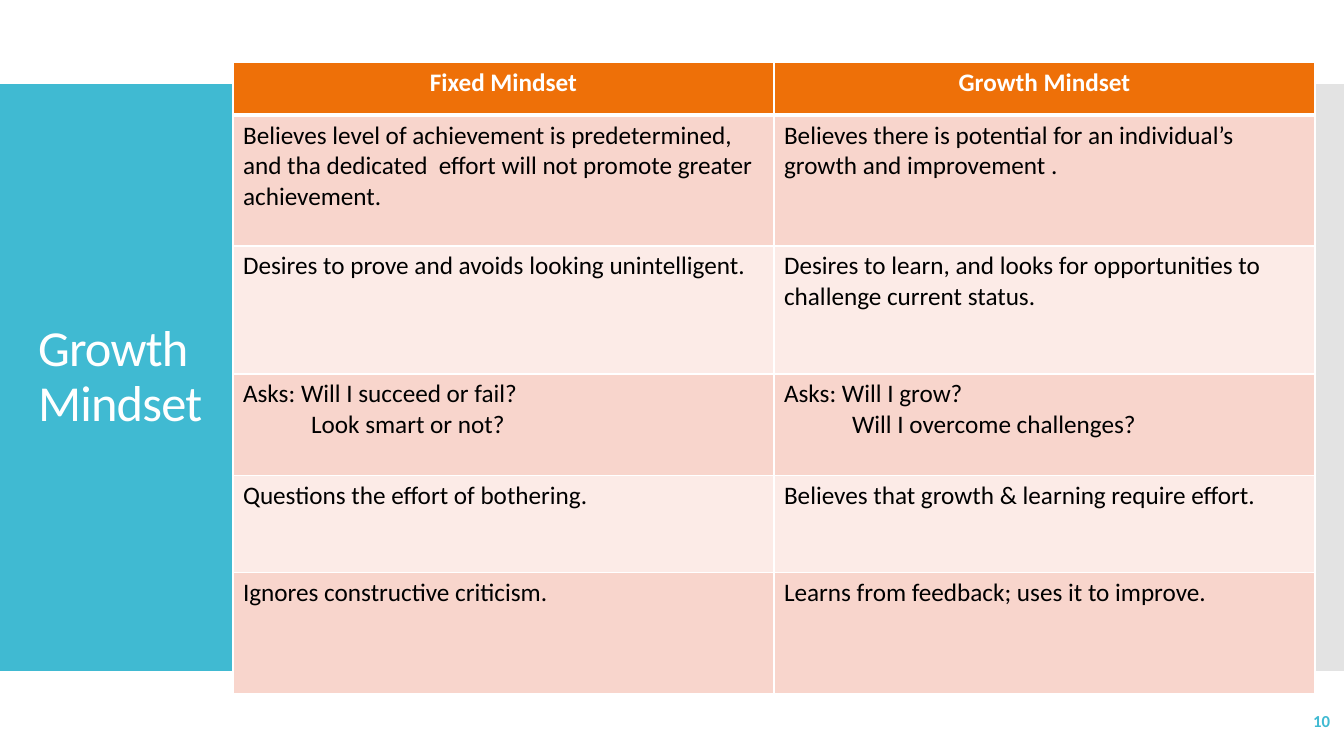
from lxml.etree import SubElement
from pptx import Presentation
from pptx.dml.color import RGBColor
from pptx.enum.shapes import MSO_SHAPE
from pptx.enum.text import MSO_ANCHOR, MSO_AUTO_SIZE, PP_ALIGN
from pptx.oxml.ns import qn
from pptx.util import Emu, Pt

COLORS = {
    "teal": "40BAD2",
    "gray": "C8C8C8",
    "orange": "EE7008",
    "rose": "F8D5CC",
    "blush": "FCEBE7",
    "white": "FFFFFF",
    "black": "000000",
}
ROWS = [
    (53, "Fixed Mindset", "Growth Mindset"),
    (131, "Believes level of achievement is predetermined, and tha dedicated  effort will not promote greater achievement.",
     "Believes there is potential for an individual’s growth and improvement ."),
    (128, "Desires to prove and avoids looking unintelligent.",
     "Desires to learn, and looks for opportunities to challenge current status."),
    (102, "Asks: Will I succeed or fail?\nLook smart or not?",
     "Asks: Will I grow?\nWill I overcome challenges?"),
    (97, "Questions the effort of bothering.", "Believes that growth & learning require effort."),
    (121, "Ignores constructive criticism.", "Learns from feedback; uses it to improve."),
]
COLUMN_WIDTH = 541


def px(length):
    return Emu(round(length * 914400 / 100.8))


def write_text(frame, text, size=18, color="black", bold=False, align=PP_ALIGN.LEFT,
               line_spacing=1.0, tracking=0, later_indent=0):
    for number, line in enumerate(text.split("\n")):
        paragraph = frame.add_paragraph() if number else frame.paragraphs[0]
        paragraph.alignment = align
        paragraph.line_spacing = line_spacing
        run = paragraph.add_run()
        run.text = line
        run.font.name = "Calibri"
        run.font.size = Pt(size)
        run.font.bold = bold
        run.font.color.rgb = RGBColor.from_string(COLORS[color])
        if tracking:
            run.font._element.set("spc", str(tracking))
        if number:
            paragraph._p.get_or_add_pPr().set("marL", str(px(later_indent)))


presentation = Presentation()
presentation.slide_width = px(1344)
presentation.slide_height = px(756)
slide = presentation.slides.add_slide(presentation.slide_layouts[5])

for left, width, color, alpha in [(0, 380, "teal", 100), (1302, 42, "gray", 50)]:
    band = slide.shapes.add_shape(MSO_SHAPE.RECTANGLE, px(left), px(84), px(width), px(587))
    band.shadow.inherit = False
    band.line.fill.background()
    band.fill.solid()
    band.fill.fore_color.rgb = RGBColor.from_string(COLORS[color])
    if alpha < 100:
        color_element = band._element.spPr.find(qn("a:solidFill"))[0]
        SubElement(color_element, qn("a:alpha"), val=str(alpha * 1000))

title = slide.shapes.title
title.left, title.top, title.width, title.height = px(28), px(124), px(325), px(507)
title.element.getparent().append(title.element)
title.text_frame.word_wrap = True
title.text_frame.auto_size = MSO_AUTO_SIZE.NONE
title.text_frame.vertical_anchor = MSO_ANCHOR.MIDDLE
write_text(title.text_frame, "Growth Mindset", size=36, color="white", line_spacing=0.9, tracking=-60)

page_number = slide.shapes.add_textbox(px(1172), px(701), px(168), px(40))
page_number.text_frame.word_wrap = True
page_number.text_frame.vertical_anchor = MSO_ANCHOR.MIDDLE
write_text(page_number.text_frame, "10", size=12, color="teal", bold=True, align=PP_ALIGN.RIGHT)

table_height = sum(row[0] for row in ROWS)
table = slide.shapes.add_table(len(ROWS), 2, px(233), px(62), px(2 * COLUMN_WIDTH), px(table_height)).table
for column in table.columns:
    column.width = px(COLUMN_WIDTH)

for row_number, (height, *texts) in enumerate(ROWS):
    table.rows[row_number].height = px(height)
    header = row_number == 0
    fill_color = "orange" if header else ("blush", "rose")[row_number % 2]
    for column_number, text in enumerate(texts):
        cell = table.cell(row_number, column_number)
        properties = cell._tc.get_or_add_tcPr()
        for side in "LRTB":
            thick = (row_number, side) in [(0, "B"), (1, "T")]
            border = SubElement(properties, qn(f"a:ln{side}"), w=str(Pt(3 if thick else 1)))
            border_fill = SubElement(border, qn("a:solidFill"))
            SubElement(border_fill, qn("a:srgbClr"), val=COLORS["white"])
        cell.fill.solid()
        cell.fill.fore_color.rgb = RGBColor.from_string(COLORS[fill_color])
        write_text(cell.text_frame, text, color="white" if header else "black", bold=header,
                   align=PP_ALIGN.CENTER if header else PP_ALIGN.LEFT, later_indent=68)

presentation.save("out.pptx")
